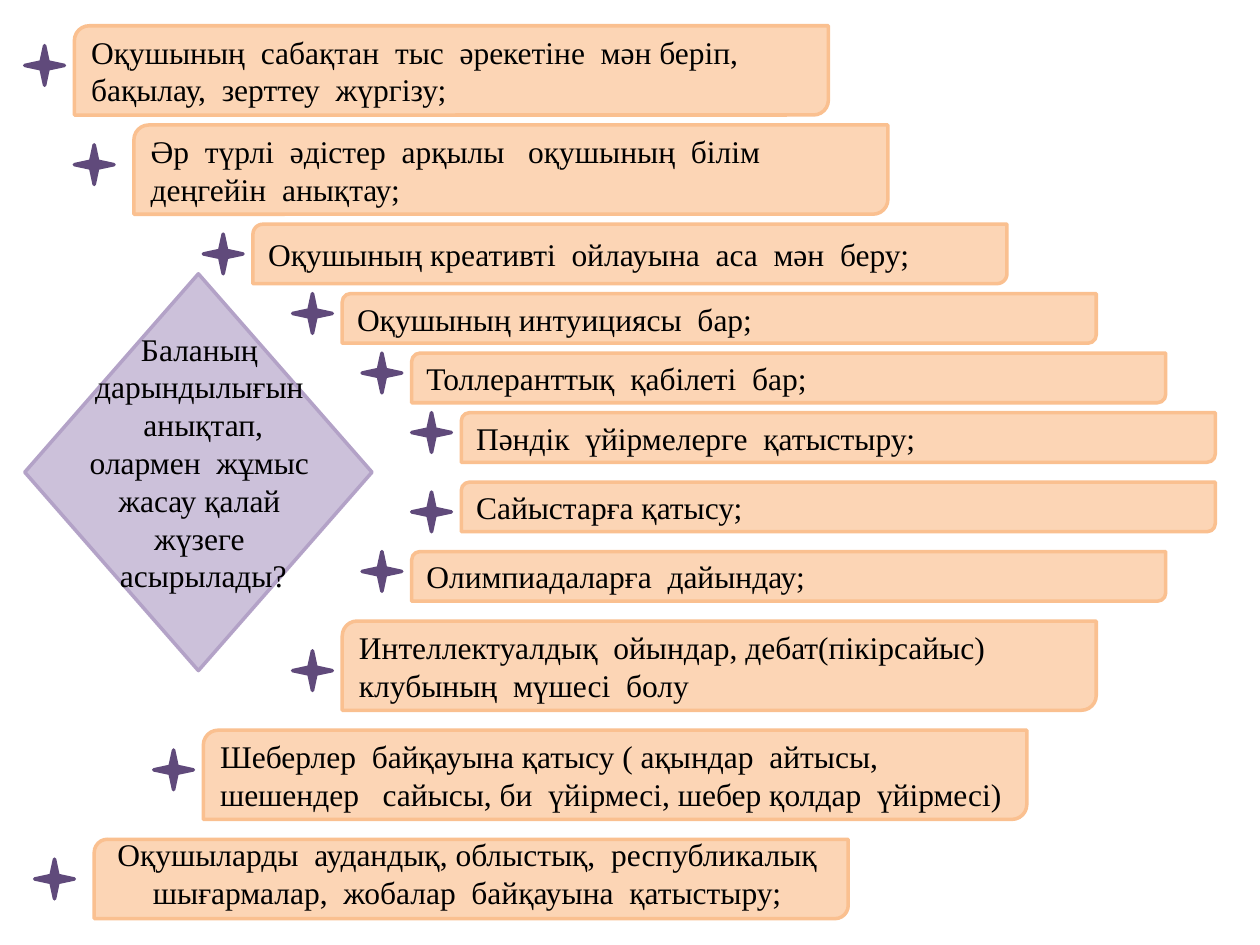
from pptx import Presentation
from pptx.dml.color import RGBColor
from pptx.enum.shapes import MSO_SHAPE
from pptx.enum.text import MSO_ANCHOR, PP_ALIGN
from pptx.util import Inches, Pt

DIAMOND = MSO_SHAPE.DIAMOND
STAR = MSO_SHAPE.STAR_4_POINT
BAR = MSO_SHAPE.ROUND_2_DIAG_RECTANGLE
LEFT, CENTER = PP_ALIGN.LEFT, PP_ALIGN.CENTER
MIDDLE = MSO_ANCHOR.MIDDLE

BLACK = RGBColor(0x00, 0x00, 0x00)
LILAC = RGBColor(0xCC, 0xC1, 0xDA)
LILAC_EDGE = RGBColor(0xB3, 0xA2, 0xC7)
PEACH = RGBColor(0xFC, 0xD5, 0xB5)
PEACH_EDGE = RGBColor(0xFA, 0xC0, 0x90)
PURPLE = RGBColor(0x60, 0x4A, 0x7B)

prs = Presentation()
prs.slide_width, prs.slide_height = Inches(10), Inches(7.5)
slide = prs.slides.add_slide(prs.slide_layouts[6])

CELL = prs.slide_width / 254
TOP = 5.2
BAR_COLS = 152
STAR_CELLS = 8


def add_figure(preset, col, row, cols, rows, fill, edge):
    figure = slide.shapes.add_shape(
        preset, int(col * CELL), int((TOP + row) * CELL), int(cols * CELL), int(rows * CELL))
    figure.shadow.inherit = False
    figure.fill.solid()
    figure.fill.fore_color.rgb = fill
    figure.line.color.rgb = edge
    figure.line.width = Pt(2)
    return figure


def write(frame, text, align):
    frame.word_wrap = True
    paragraph = frame.paragraphs[0]
    paragraph.alignment = align
    run = paragraph.add_run()
    run.text = text
    run.font.name = "Times New Roman"
    run.font.size = Pt(18)
    run.font.color.rgb = BLACK


add_figure(DIAMOND, 5, 50, 70, 80, LILAC, LILAC_EDGE)
question = slide.shapes.add_textbox(
    int(15 * CELL), int((TOP + 60) * CELL), int(52 * CELL), int(72 * CELL))
write(question.text_frame,
      "Баланың  дарындылығын  анықтап, олармен  жұмыс  жасау қалай  жүзеге  асырылады?",
      CENTER)

# col, row, cols, rows, star columns to the left, star rows down, text
steps = [
    (15, 0, BAR_COLS, 18, 10, 4,
     "Оқушының  сабақтан  тыс  әрекетіне  мән беріп, бақылау,  зерттеу  жүргізу;"),
    (27, 20, BAR_COLS, 18, 12, 4,
     "Әр  түрлі  әдістер  арқылы   оқушының  білім  деңгейін  анықтау;"),
    (51, 40, BAR_COLS, 12, 10, 2, "Оқушының креативті  ойлауына  аса  мән  беру;"),
    (69, 54, BAR_COLS, 10, 10, 0, "Оқушының интуициясы  бар;"),
    (83, 66, BAR_COLS, 10, 10, 0, "Толлеранттық  қабілеті  бар;"),
    (93, 78, BAR_COLS, 10, 10, 0, "Пәндік  үйірмелерге  қатыстыру;"),
    (93, 92, BAR_COLS, 10, 10, 2, "Сайыстарға қатысу;"),
    (83, 106, BAR_COLS, 10, 10, 0, "Олимпиадаларға  дайындау;"),
    (69, 120, BAR_COLS, 18, 10, 6,
     "Интеллектуалдық  ойындар, дебат(пікірсайыс) клубының  мүшесі  болу"),
    (41, 142, 166, 18, 10, 4,
     "Шеберлер  байқауына қатысу ( ақындар  айтысы, шешендер   сайысы, "
     "би  үйірмесі, шебер қолдар  үйірмесі)"),
    (19, 164, BAR_COLS, 16, 12, 4,
     "Оқушыларды  аудандық, облыстық,  республикалық  шығармалар,  "
     "жобалар  байқауына  қатыстыру; "),
]

for col, row, cols, rows, star_left, star_down, text in steps:
    bar = add_figure(BAR, col, row, cols, rows, PEACH, PEACH_EDGE)
    bar.text_frame.vertical_anchor = MIDDLE
    write(bar.text_frame, text, LEFT)
    add_figure(STAR, col - star_left, row + star_down, STAR_CELLS, STAR_CELLS, PURPLE, PURPLE)

bar.text_frame.paragraphs[0].alignment = CENTER
bar.text_frame.margin_bottom = Inches(0.15)

prs.save("out.pptx")
